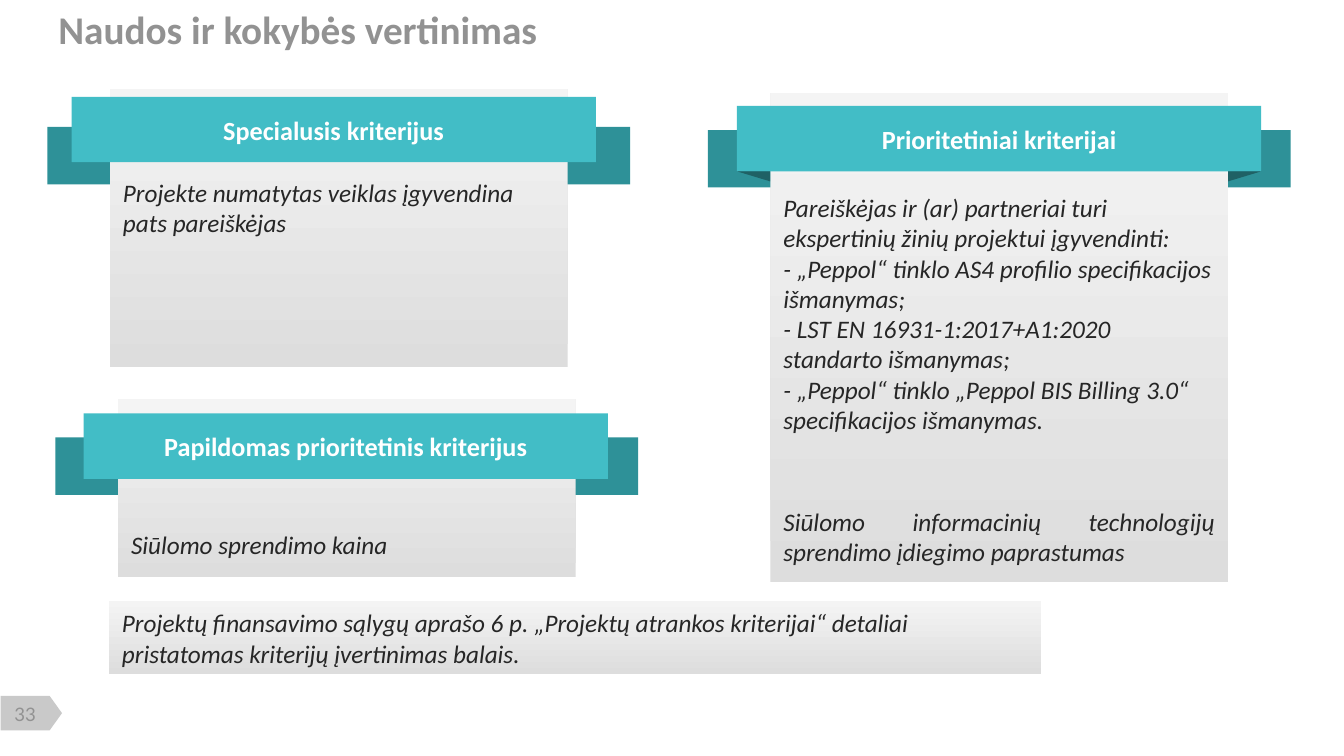
from dataclasses import dataclass

from pptx import Presentation
from pptx.dml.color import RGBColor
from pptx.enum.shapes import MSO_SHAPE
from pptx.enum.text import MSO_ANCHOR, MSO_AUTO_SIZE, PP_ALIGN
from pptx.util import Inches, Pt

RECTANGLE = MSO_SHAPE.RECTANGLE
PAGE_TAB = MSO_SHAPE.FLOWCHART_OFFPAGE_CONNECTOR
LEFT, CENTER, JUSTIFY = PP_ALIGN.LEFT, PP_ALIGN.CENTER, PP_ALIGN.JUSTIFY
TOP, MIDDLE = MSO_ANCHOR.TOP, MSO_ANCHOR.MIDDLE


@dataclass(frozen=True)
class Theme:
    font: str = "Calibri"
    number_font: str = "Lato"
    band: str = "42BDC6"
    tail: str = "2E9198"
    fold: str = "1F6165"
    panel_dark: str = "DDDDDD"
    panel_light: str = "F4F4F4"
    tab: str = "C9C9C9"
    grey: str = "929292"
    ink: str = "262626"
    white: str = "FFFFFF"
    title_size: float = 28
    band_size: float = 18.7
    body_size: float = 18
    number_size: float = 13.3


THEME = Theme()


def add_block(shapes, kind, left, top, width, height, color=None):
    """Add a borderless shape; without a color it gets the panel gradient."""
    shape = shapes.add_shape(kind, Inches(left), Inches(top), Inches(width), Inches(height))
    shape.shadow.inherit = False
    shape.line.fill.background()
    if color:
        shape.fill.solid()
        shape.fill.fore_color.rgb = RGBColor.from_string(color)
    else:
        shape.fill.gradient()
        shape.fill.gradient_angle = 90
        for stop, shade in zip(shape.fill.gradient_stops, (THEME.panel_dark, THEME.panel_light)):
            stop.color.rgb = RGBColor.from_string(shade)
    return shape


def write(shape, text, size, color, margins, align=LEFT, anchor=MIDDLE,
          font=THEME.font, bold=False, italic=False):
    """Fill a shape with text; margins run left, top, right, bottom in inches."""
    frame = shape.text_frame
    frame.text = text
    frame.word_wrap = True
    frame.auto_size = MSO_AUTO_SIZE.NONE
    frame.vertical_anchor = anchor
    (frame.margin_left, frame.margin_top,
     frame.margin_right, frame.margin_bottom) = map(Inches, margins)
    for paragraph in frame.paragraphs:
        paragraph.alignment = align
        for run in paragraph.runs:
            run.font.name = font
            run.font.size = Pt(size)
            run.font.bold = bold
            run.font.italic = italic
            run.font.color.rgb = RGBColor.from_string(color)
    return frame


presentation = Presentation()
presentation.slide_width = Inches(13.33)
presentation.slide_height = Inches(7.5)
slide = presentation.slides.add_slide(presentation.slide_layouts[5])
shapes = slide.shapes

# Title
title = shapes.title
title.left, title.top = Inches(0.58), Inches(0.03)
title.width, title.height = Inches(9.05), Inches(0.52)
write(title, "Naudos ir kokybės vertinimas", THEME.title_size, THEME.grey,
      (0, 0.05, 0.1, 0.05), bold=True)

# Page number tab
tab = add_block(shapes, PAGE_TAB, 0.14, 6.77, 0.34, 0.61, THEME.tab)
tab.rotation = 270
number = shapes.add_textbox(Inches(0.03), Inches(6.97), Inches(0.44), Inches(0.22))
write(number, "33", THEME.number_size, THEME.grey, (0, 0, 0, 0), CENTER,
      font=THEME.number_font)

# Criteria: heading, text, panel left, top, height, text inset, band left, top, tail top
criteria = [
    ("Prioritetiniai kriterijai",
     "Pareiškėjas ir (ar) partneriai turi ekspertinių žinių projektui įgyvendinti:\n"
     "- „Peppol“ tinklo AS4 profilio specifikacijos išmanymas;\n"
     "- LST EN 16931-1:2017+A1:2020 standarto išmanymas;\n"
     "- „Peppol“ tinklo „Peppol BIS Billing 3.0“ specifikacijos išmanymas.\n"
     "Siūlomo informacinių technologijų sprendimo įdiegimo paprastumas",
     7.64, 0.92, 4.85, 0.99, 7.31, 1.05, 1.29),
    ("Specialusis kriterijus",
     "Projekte numatytas veiklas įgyvendina pats pareiškėjas",
     1.09, 0.88, 2.76, 0.88, 0.71, 0.96, 1.26),
    ("Papildomas prioritetinis kriterijus", "Siūlomo sprendimo kaina",
     1.17, 3.96, 1.77, 1.29, 0.83, 4.1, 4.34),
]
PANEL_WIDTH, TAIL_WIDTH, TAIL_HEIGHT = 4.54, 0.62, 0.57
BAND_WIDTH, BAND_HEIGHT = 5.2, 0.65

body_frames = []
for heading, text, left, top, height, inset, band_left, band_top, tail_top in criteria:
    panel = add_block(shapes, RECTANGLE, left, top, PANEL_WIDTH, height)
    body_frames.append(write(panel, text, THEME.body_size, THEME.ink,
                             (0.13, inset, 0.13, 0.07), anchor=TOP, italic=True))
    for tail_left in (left - TAIL_WIDTH, left + PANEL_WIDTH):
        add_block(shapes, RECTANGLE, tail_left, tail_top, TAIL_WIDTH, TAIL_HEIGHT, THEME.tail)
    band = add_block(shapes, RECTANGLE, band_left, band_top, BAND_WIDTH, BAND_HEIGHT, THEME.band)
    write(band, heading, THEME.band_size, THEME.white, (0.13, 0.07, 0.13, 0.07),
          CENTER, bold=True)

# The last priority criterion stands apart from the list
last_criterion = body_frames[0].paragraphs[-1]
last_criterion.alignment = JUSTIFY
last_criterion.space_before = Pt(51)

# Ribbon folds under the priority band
for outer, inner in ((7.31, 7.64), (12.51, 12.18)):
    builder = shapes.build_freeform(Inches(outer), Inches(1.7))
    builder.add_line_segments([(Inches(inner), Inches(1.7)), (Inches(inner), Inches(1.8))])
    fold = builder.convert_to_shape()
    fold.shadow.inherit = False
    fold.line.fill.background()
    fold.fill.solid()
    fold.fill.fore_color.rgb = RGBColor.from_string(THEME.fold)

# Closing note
note = add_block(shapes, RECTANGLE, 1.08, 5.96, 9.25, 0.73)
write(note, "Projektų finansavimo sąlygų aprašo 6 p. „Projektų atrankos kriterijai“ detaliai "
      "pristatomas kriterijų įvertinimas balais.", THEME.body_size, THEME.ink,
      (0.13, 0.07, 0.13, 0.07), anchor=TOP, italic=True)

presentation.save("out.pptx")
